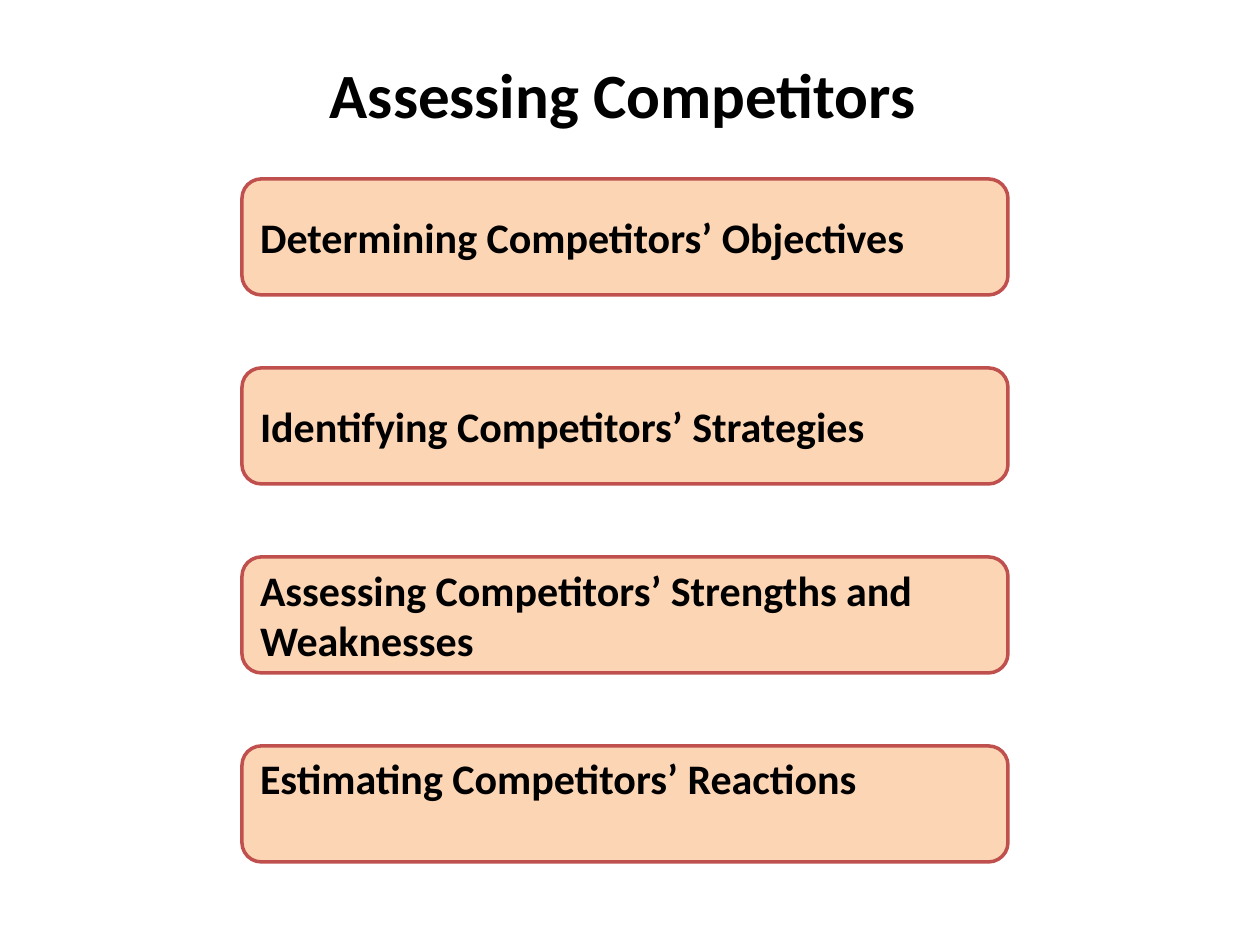
"""Build the Assessing Competitors slide: a title above four rounded steps."""
from pptx import Presentation
from pptx import util as u
from pptx.dml.color import RGBColor
from pptx.enum import shapes, text

PX = u.Inches(1) // 126
COLORS = {"text": "000000", "fill": "FCD5B5", "line": "C0504D", "background": "FFFFFF"}
LEFT, TOP, WIDTH, HEIGHT, PITCH = 242, 179, 766, 116, 189
JUSTIFY, START = text.PP_ALIGN.JUSTIFY, text.PP_ALIGN.LEFT
MIDDLE, UPPER = text.MSO_ANCHOR.MIDDLE, text.MSO_ANCHOR.TOP
STEPS = [
    ("Determining Competitors’ Objectives", JUSTIFY, MIDDLE),
    ("Identifying Competitors’ Strategies", JUSTIFY, MIDDLE),
    ("Assessing Competitors’ Strengths and Weaknesses", START, MIDDLE),
    ("Estimating Competitors’ Reactions", JUSTIFY, UPPER),
]


def color(name):
    return RGBColor.from_string(COLORS[name])


def write(shape, words, size, alignment, anchor):
    frame = shape.text_frame
    frame.word_wrap = True
    frame.vertical_anchor = anchor
    paragraph = frame.paragraphs[0]
    paragraph.alignment = alignment
    run = paragraph.add_run()
    run.text = words
    run.font.name = "Calibri"
    run.font.size = u.Pt(size)
    run.font.bold = True
    run.font.color.rgb = color("text")


presentation = Presentation()
presentation.slide_width = u.Inches(10)
presentation.slide_height = u.Inches(7.5)
slide = presentation.slides.add_slide(presentation.slide_layouts[5])
slide.background.fill.solid()
slide.background.fill.fore_color.rgb = color("background")

title = slide.shapes.title
title.left, title.top, title.width, title.height = 63 * PX, 38 * PX, 1134 * PX, 110 * PX
write(title, "Assessing Competitors ", 36, text.PP_ALIGN.CENTER, MIDDLE)

for index, (words, alignment, anchor) in enumerate(STEPS):
    step = slide.shapes.add_shape(
        shapes.MSO_SHAPE.ROUNDED_RECTANGLE,
        LEFT * PX, (TOP + index * PITCH) * PX, WIDTH * PX, HEIGHT * PX,
    )
    step.shadow.inherit = False
    step.fill.solid()
    step.fill.fore_color.rgb = color("fill")
    step.line.color.rgb = color("line")
    step.line.width = u.Pt(2)
    write(step, words, 24, alignment, anchor)
    if anchor == UPPER:
        step.text_frame.margin_top = 1 * PX

presentation.save("out.pptx")
